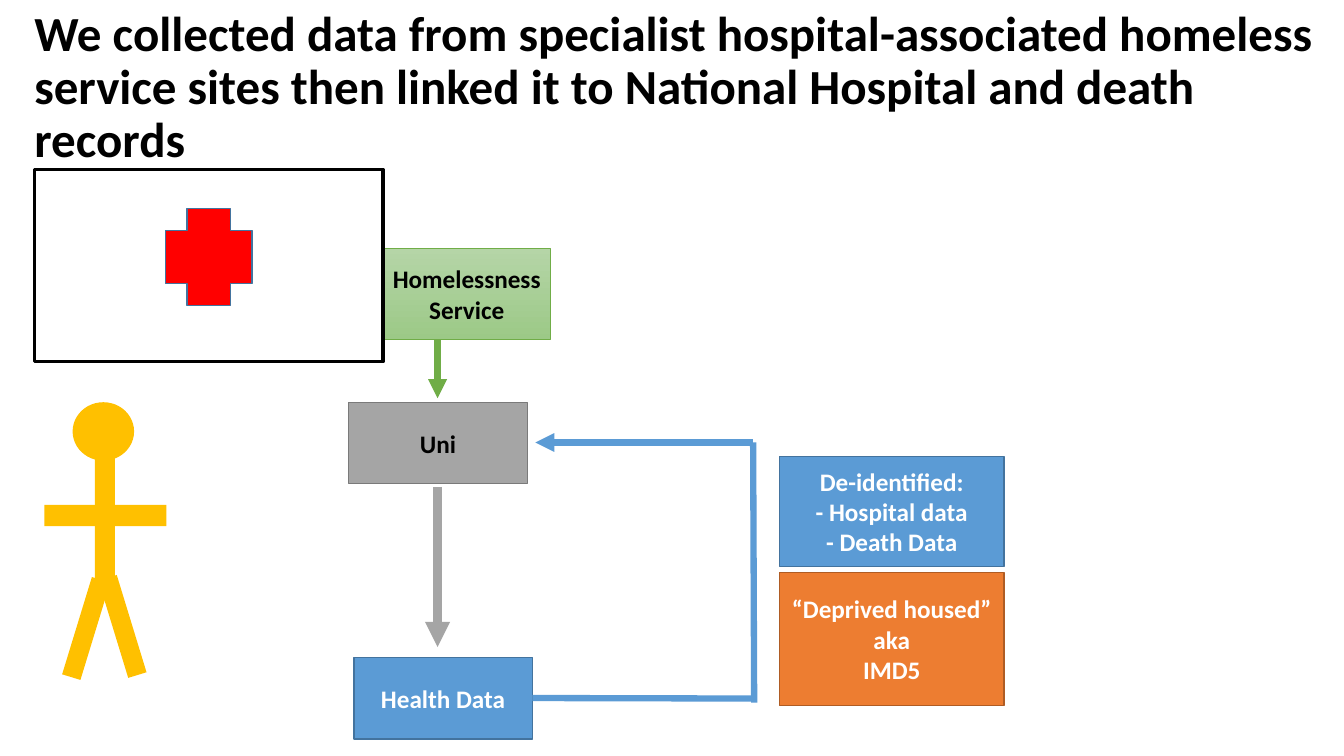
from pptx import Presentation
from pptx.dml.color import RGBColor
from pptx.enum import shapes, text
from pptx.oxml import ns
from pptx.util import Inches, Pt
from lxml import etree

FONT = "Calibri"
COLORS = {
    "black": "000000", "white": "FFFFFF", "red": "FF0000", "yellow": "FFC000",
    "green": "70AD47", "green_top": "B5D5A7", "green_bottom": "9CC987",
    "gray": "A5A5A5", "gray_edge": "7A7A7A",
    "blue": "5B9BD5", "blue_edge": "43739E",
    "orange": "ED7D31", "orange_edge": "AF5C24",
}


def color(name):
    return RGBColor.from_string(COLORS[name])


def write(frame, lines, size, ink, align):
    frame.word_wrap = True
    frame.text = "\n".join(lines)
    for para in frame.paragraphs:
        para.alignment = align
        for span in para.runs:
            span.font.name = FONT
            span.font.size = Pt(size)
            span.font.bold = True
            span.font.color.rgb = color(ink)


def add_block(parent, box, fill=None, edge=None, width=1.0,
              kind=shapes.MSO_SHAPE.RECTANGLE):
    """Add a preset shape without shadow, to a slide's shapes or a group's."""
    block = parent.add_shape(kind, *map(Inches, box))
    block.shadow.inherit = False
    if fill:
        block.fill.solid()
        block.fill.fore_color.rgb = color(fill)
    else:
        block.fill.background()
    if edge:
        block.line.color.rgb = color(edge)
        block.line.width = Pt(width)
    else:
        block.line.fill.background()
    return block


def add_label_box(page, box, lines, fill, edge, ink="white", width=1.0):
    block = add_block(page.shapes, box, fill, edge, width)
    frame = block.text_frame
    frame.margin_left = frame.margin_right = Inches(0.05)
    frame.vertical_anchor = text.MSO_ANCHOR.MIDDLE
    write(frame, lines, 18, ink, text.PP_ALIGN.CENTER)
    return block


def add_link(page, start, end, ink, width=4.5, arrow=False):
    link = page.shapes.add_connector(
        shapes.MSO_CONNECTOR.STRAIGHT, *map(Inches, (*start, *end)))
    link.line.color.rgb = color(ink)
    link.line.width = Pt(width)
    if arrow:
        etree.SubElement(link.line._get_or_add_ln(), ns.qn("a:tailEnd"), type="triangle")
    etree.SubElement(link._element.spPr, ns.qn("a:effectLst"))
    return link


def add_title(page, box):
    frame = page.shapes.add_textbox(*map(Inches, box)).text_frame
    frame.margin_left = frame.margin_right = frame.margin_top = frame.margin_bottom = 0
    write(frame, ["We collected data from specialist hospital-associated homeless "
                  "service sites then linked it to National Hospital and death records"],
          35, "black", text.PP_ALIGN.LEFT)
    frame.paragraphs[0].line_spacing = 0.9


def add_hospital(page, box):
    left, top, _, _ = box
    add_block(page.shapes, box, edge="black", width=2.25)
    add_block(page.shapes, (left + 1.3, top + 0.39, 0.86, 0.96), "red", "blue_edge",
              kind=shapes.MSO_SHAPE.CROSS)


def add_person(page, box):
    left, top, _, _ = box
    person = page.shapes.add_group_shape()
    add_block(person.shapes, (left + 0.28, top, 0.61, 0.58), "yellow",
              kind=shapes.MSO_SHAPE.OVAL)
    limbs = [
        (0.5, 0.54, 0.2, 1.26, 0),
        (0.32, 1.74, 0.19, 1.01, 17),
        (0.68, 1.72, 0.19, 1.01, -17),
        (0.5, 0.52, 0.21, 1.21, 90),
    ]
    for x, y, width, height, angle in limbs:
        limb = add_block(person.shapes, (left + x, top + y, width, height), "yellow")
        limb.rotation = angle


def add_data_flow(page, box):
    """Service, university and data agency, one under another, with the return path."""
    left, top, width, _ = box
    service = add_label_box(page, (left + 0.34, top, 1.66, 0.91), ["Homelessness Service"],
                            "green", "green", "black", 0.5)
    service.fill.gradient()
    service.fill.gradient_angle = 270
    for stop, name in zip(service.fill.gradient_stops, ("green_top", "green_bottom")):
        stop.color.rgb = color(name)
    add_label_box(page, (left, top + 1.53, 1.77, 0.81), ["Uni"],
                  "gray", "gray_edge", "black")
    agency = add_label_box(page, (left + 0.05, top + 4.06, 1.77, 0.81), ["Health Data"],
                           "blue", "blue_edge")

    spine, right = left + 0.88, left + width
    return_y, agency_y = top + 1.93, top + 4.47
    add_link(page, (spine, top + 0.91), (spine, top + 1.49), "green", arrow=True)
    add_link(page, (spine, top + 2.37), (spine, top + 3.96), "gray", 6, arrow=True)
    add_link(page, (right, return_y), (left + 1.85, return_y), "blue", arrow=True)
    add_link(page, (right, return_y), (right + 0.01, agency_y + 0.04), "blue")
    outgoing = add_link(page, (left + 1.82, agency_y), (right, agency_y), "blue")
    outgoing.begin_connect(agency, 3)


def add_data_sets(page, box):
    left, top, width, height = box
    add_label_box(page, (left, top, width, 1.09),
                  ["De-identified:", "- Hospital data", "- Death Data"],
                  "blue", "blue_edge")
    add_label_box(page, (left, top + 1.15, width, height - 1.15),
                  ["“Deprived housed” aka", "IMD5"], "orange", "orange_edge")


def main():
    deck = Presentation()
    deck.slide_width, deck.slide_height = Inches(13.33), Inches(7.5)
    page = deck.slides.add_slide(deck.slide_layouts[6])
    add_title(page, (0.34, 0.09, 12.81, 1.53))
    add_data_flow(page, (3.46, 2.46, 4.01, 4.87))
    add_data_sets(page, (7.73, 4.53, 2.23, 2.47))
    add_hospital(page, (0.34, 1.68, 3.46, 1.91))
    add_person(page, (0.44, 3.99, 1.21, 2.75))
    deck.save("out.pptx")


if __name__ == "__main__":
    main()
